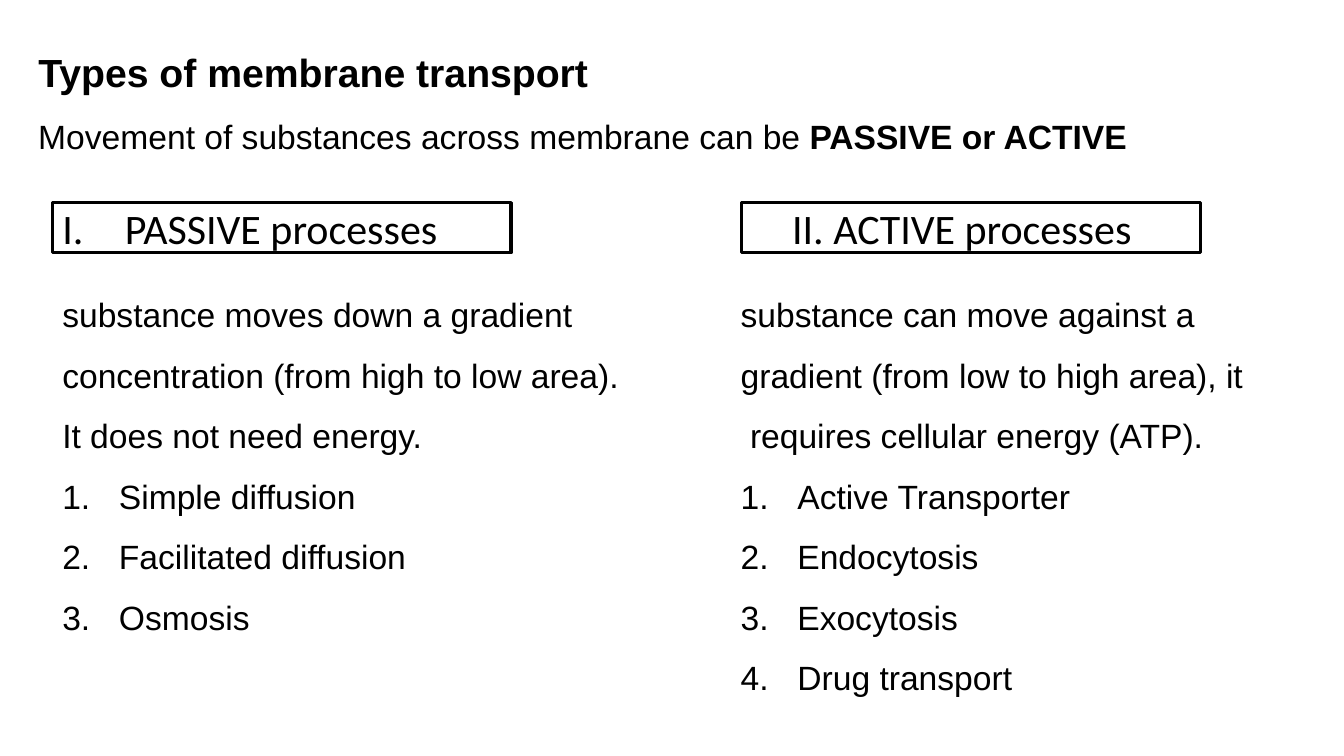
from lxml import etree
from pptx import Presentation
from pptx.dml.color import RGBColor
from pptx.enum.shapes import MSO_SHAPE
from pptx.enum.text import MSO_ANCHOR, MSO_AUTO_SIZE, PP_ALIGN
from pptx.oxml.ns import qn
from pptx.util import Pt

RECT = MSO_SHAPE.RECTANGLE
TOP, MIDDLE = MSO_ANCHOR.TOP, MSO_ANCHOR.MIDDLE
NO_FIT = MSO_AUTO_SIZE.NONE
LEFT = PP_ALIGN.LEFT
TITLE_ONLY = 5

INK = "000000"
LIST_IND = 40.5
HEAD_IND = 44.64
BODY = {"size": Pt(24), "name": "Arial", "bold": False}
STRONG = {**BODY, "bold": True}
TITLE = {**STRONG, "size": Pt(28)}
HEAD = {"size": Pt(30), "name": "Calibri", "bold": False}


def color(code):
    return RGBColor.from_string(code)


def set_all(obj, values):
    for key, value in values.items():
        setattr(obj, key, value)


def frame(shape, anchor=TOP, pad=3.6):
    """Prepare a shape's text frame and return it."""
    text = shape.text_frame
    set_all(text, {
        "word_wrap": True, "auto_size": NO_FIT, "vertical_anchor": anchor,
        "margin_left": Pt(7.2), "margin_right": Pt(7.2),
        "margin_top": Pt(pad), "margin_bottom": Pt(pad),
    })
    return text


def box(slide, *place):
    return frame(slide.shapes.add_textbox(*map(Pt, place)))


def write(para, runs, space=1.5):
    """Fill a paragraph with (words, font format) pairs."""
    set_all(para, {"alignment": LEFT, "line_spacing": space})
    for words, style in runs:
        run = para.add_run()
        run.text = words
        set_all(run.font, style)
        run.font.color.rgb = color(INK)


def indent(para, left, first=0):
    props = para._p.get_or_add_pPr()
    props.set("marL", str(Pt(left)))
    props.set("indent", str(Pt(first)))
    return props


def number(para, kind, hang):
    """Give a paragraph automatic numbering with a hanging indent."""
    props = indent(para, hang, -hang)
    etree.SubElement(props, qn("a:buFont")).set("typeface", "+mj-lt")
    etree.SubElement(props, qn("a:buAutoNum")).set("type", kind)


def heading(slide, left, words):
    shape = slide.shapes.add_shape(RECT, Pt(left), Pt(144.7), Pt(327.6), Pt(36))
    shape.shadow.inherit = False
    shape.fill.background()
    shape.line.color.rgb = color(INK)
    shape.line.width = Pt(2.25)
    para = frame(shape, MIDDLE, 0).paragraphs[0]
    write(para, [(words, HEAD)], 1.0)
    return para


def column(slide, left, width, height, lines, items):
    """Add (words, indent) lines followed by a numbered list."""
    text = box(slide, left, 192.2, width, height)
    for i, (words, left_ind) in enumerate(lines):
        para = text.add_paragraph() if i else text.paragraphs[0]
        write(para, [(words, BODY)])
        indent(para, left_ind)
    for item in items:
        para = text.add_paragraph()
        write(para, [(item, BODY)])
        number(para, "arabicPeriod", LIST_IND)


def main():
    deck = Presentation()
    set_all(deck, {"slide_width": Pt(960), "slide_height": Pt(540)})
    slide = deck.slides.add_slide(deck.slide_layouts[TITLE_ONLY])

    title = slide.shapes.title
    set_all(title, {"left": Pt(20.2), "top": Pt(14.4),
                    "width": Pt(846), "height": Pt(57.5)})
    write(frame(title).paragraphs[0], [("Types of membrane transport", TITLE)])

    intro = box(slide, 20.2, 64.7, 846, 50.3)
    write(intro.paragraphs[0], [
        ("Movement of substances across membrane can be ", BODY),
        ("PASSIVE or ACTIVE", STRONG),
    ])

    number(heading(slide, 37.4, "PASSIVE processes"), "romanUcPeriod", HEAD_IND)
    indent(heading(slide, 529.9, "II. ACTIVE processes"), 28.8)

    column(slide, 37.4, 416.2, 307.4,
           [("substance moves down a gradient concentration "
             "(from high to low area). It does not need energy.", 0)],
           ["Simple diffusion", "Facilitated diffusion", "Osmosis"])
    column(slide, 522, 405.4, 310,
           [("substance can move against a gradient "
             "(from low to high area), it", 0),
            ("requires cellular energy (ATP).", 6.67)],
           ["Active Transporter", "Endocytosis", "Exocytosis",
            "Drug transport"])

    deck.save("out.pptx")


if __name__ == "__main__":
    main()
